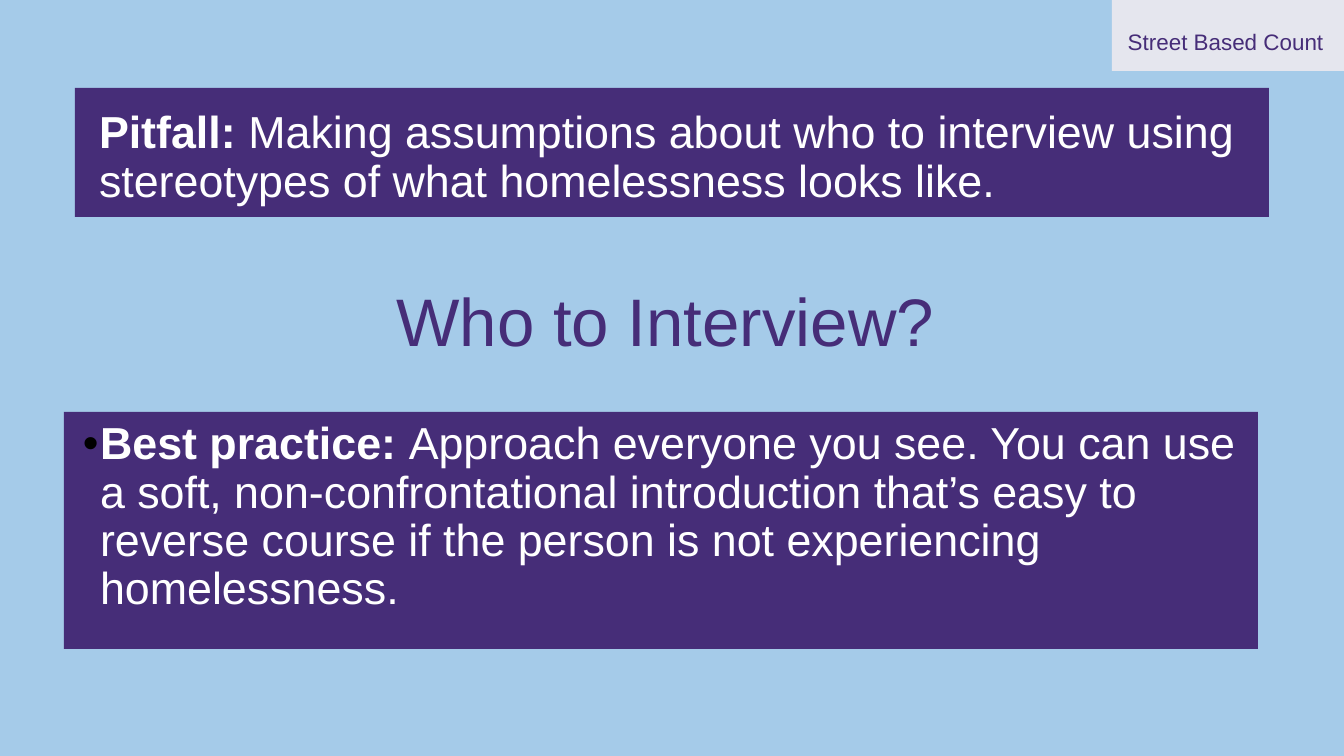
import pptx
import pptx.util
import pptx.dml.color
import pptx.enum.shapes
import pptx.enum.text
import pptx.oxml
import pptx.oxml.ns

WIDE, HIGH = 1344, 756
UNIT = 914400 * 20 / WIDE
SKY, PLUM, MIST, WHITE, BLACK = "A5CBE9", "462D78", "E5E6EE", "FFFFFF", "000000"

BARS = [
    ((75, 88, 1194, 129), PLUM),
    ((64, 412, 1194, 237), PLUM),
    ((1112, 0, 237, 71), MIST),
]
TITLE = [("Who to Interview?", False)]
PITFALL = [
    ("Pitfall:", True),
    (" Making assumptions about who to interview using stereotypes "
     "of what homelessness looks like.", False),
]
BEST = [
    ("Best practice: ", True),
    ("Approach everyone you see. You can use a soft, non-confrontational "
     "introduction that’s easy to reverse course if the person is not "
     "experiencing homelessness.", False),
]
LABEL = [("Street Based Count", False)]


def px(num):
    return pptx.util.Emu(round(num * UNIT))


def tint(code):
    return pptx.dml.color.RGBColor.from_string(code)


def place(shape, box):
    shape.left, shape.top, shape.width, shape.height = map(px, box)


def write(shape, box, runs, size=48, color=WHITE, align="LEFT", line=0.9, before=0):
    place(shape, box)
    shape.element.getparent().append(shape.element)
    frame = shape.text_frame
    frame.word_wrap = True
    frame.auto_size = pptx.enum.text.MSO_AUTO_SIZE.NONE
    frame.vertical_anchor = pptx.enum.text.MSO_ANCHOR.TOP
    frame.margin_left = frame.margin_right = frame.margin_top = frame.margin_bottom = 0
    para = frame.paragraphs[0]
    para.alignment = getattr(pptx.enum.text.PP_ALIGN, align)
    para.line_spacing = line
    para.space_before = pptx.util.Pt(before)
    for text, bold in runs:
        run = para.add_run()
        run.text = text
        font = run.font
        font.name, font.size, font.bold = "Arial", pptx.util.Pt(size), bold
        font.color.rgb = tint(color)
    return para


def bullet(para, color, hang):
    props = para._p.get_or_add_pPr()
    props.set("marL", str(px(hang)))
    props.set("indent", str(-px(hang)))
    space = pptx.oxml.ns.nsdecls("a")
    for part in (
        f'<a:buClr {space}><a:srgbClr val="{color}"/></a:buClr>',
        f'<a:buFont {space} typeface="Arial"/>',
        f'<a:buChar {space} char="•"/>',
    ):
        props.append(pptx.oxml.parse_xml(part))


def main():
    deck = pptx.Presentation()
    deck.slide_width, deck.slide_height = px(WIDE), px(HIGH)
    slide = deck.slides.add_slide(deck.slide_layouts[1])
    slide.background.fill.solid()
    slide.background.fill.fore_color.rgb = tint(SKY)
    shapes = slide.shapes

    for box, color in BARS:
        bar = shapes.add_shape(pptx.enum.shapes.MSO_SHAPE.RECTANGLE, *map(px, box))
        bar.shadow.inherit = False
        bar.fill.solid()
        bar.fill.fore_color.rgb = tint(color)
        bar.line.fill.background()

    write(shapes.title, (69, 263, 1193, 97), TITLE,
          size=72, color=PLUM, align="CENTER", line=1.2)
    write(shapes.add_textbox(0, 0, 0, 0), (99, 110, 1163, 97), PITFALL)
    best = write(slide.placeholders[1], (83, 421, 1163, 205), BEST, before=10)
    bullet(best, BLACK, 17)
    write(shapes.add_textbox(0, 0, 0, 0), (1107, 23, 237, 27), LABEL,
          size=24, color=PLUM, align="CENTER", line=1.2)

    deck.save("out.pptx")


if __name__ == "__main__":
    main()
